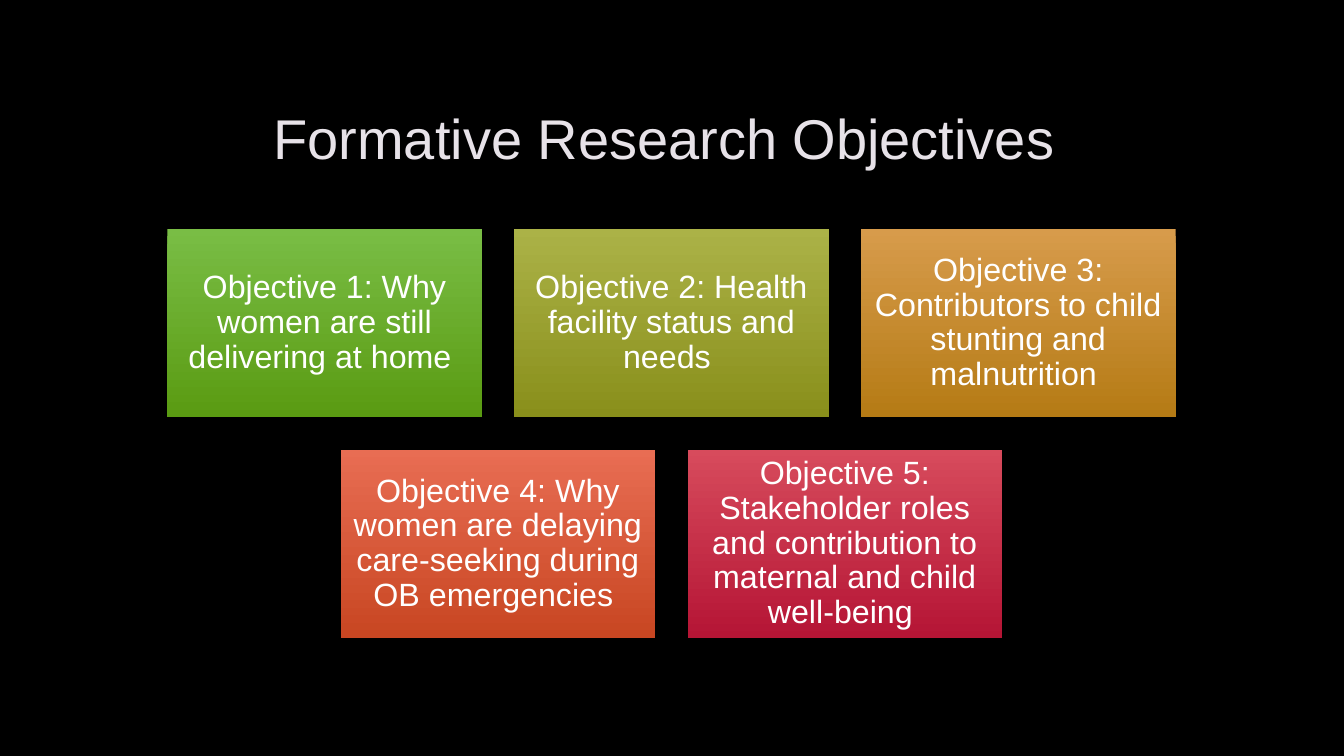
import pptx
import pptx.dml.color
import pptx.enum.shapes
import pptx.enum.text
import pptx.util

INCH = pptx.util.Inches
CARDS = [
    (0, 0, "Objective 1: Why women are still delivering at home ", "79BD45", "5A9B12"),
    (2, 0, "Objective 2: Health facility status and needs ", "ABB247", "898F1B"),
    (4, 0, "Objective 3: Contributors to child stunting and malnutrition ", "D79B4B", "B57B15"),
    (1, 1, "Objective 4: Why women are delaying care-seeking during OB emergencies ", "E86D53", "C84622"),
    (3, 1, "Objective 5: Stakeholder roles and contribution to maternal and child well-being ", "D74B5C", "B51535"),
]


def paint(code):
    return pptx.dml.color.RGBColor.from_string(code)


def write(frame, text, size, color, font="Arial", space=1.0, inset=None):
    frame.word_wrap = True
    frame.auto_size = pptx.enum.text.MSO_AUTO_SIZE.NONE
    frame.vertical_anchor = pptx.enum.text.MSO_ANCHOR.MIDDLE
    if inset is not None:
        frame.margin_left = frame.margin_right = INCH(inset)
        frame.margin_top = frame.margin_bottom = INCH(inset)
    para = frame.paragraphs[0]
    para.alignment = pptx.enum.text.PP_ALIGN.CENTER
    para.line_spacing = space
    run = para.add_run()
    run.text = text
    run.font.size = pptx.util.Pt(size)
    run.font.name = font
    run.font.color.rgb = paint(color)


class Deck:
    """Holds the style, the card grid and the current slide."""

    left, top = 1.66, 2.27
    col, row = 1.72, 2.19
    wide, high = 3.12, 1.87
    back, ink, pale = "000000", "FFFFFF", "E7E2E8"

    def __init__(self):
        self.show = pptx.Presentation()
        self.show.slide_width = INCH(13.33)
        self.show.slide_height = INCH(7.5)
        self.slide = self.show.slides.add_slide(self.show.slide_layouts[5])
        fill = self.slide.background.fill
        fill.solid()
        fill.fore_color.rgb = paint(self.back)

    def title(self, text):
        head = self.slide.shapes.title
        head.left, head.top = INCH(1), INCH(0.67)
        head.width, head.height = INCH(11.32), INCH(1.38)
        write(head.text_frame, text, size=40, color=self.pale)

    def card(self, col, row, text, light, dark):
        box = self.slide.shapes.add_shape(
            pptx.enum.shapes.MSO_SHAPE.RECTANGLE,
            INCH(self.left + col * self.col), INCH(self.top + row * self.row),
            INCH(self.wide), INCH(self.high))
        box.shadow.inherit = False
        box.line.fill.background()
        box.fill.gradient()
        box.fill.gradient_angle = 270
        for stop, tone, spot in zip(box.fill.gradient_stops, (light, dark), (0, 1)):
            stop.color.rgb = paint(tone)
            stop.position = spot
        write(box.text_frame, text, size=23, color=self.ink, space=0.9, inset=0.1)


def main():
    deck = Deck()
    deck.title("Formative Research Objectives ")
    for card in CARDS:
        deck.card(*card)
    deck.show.save("out.pptx")


if __name__ == "__main__":
    main()
